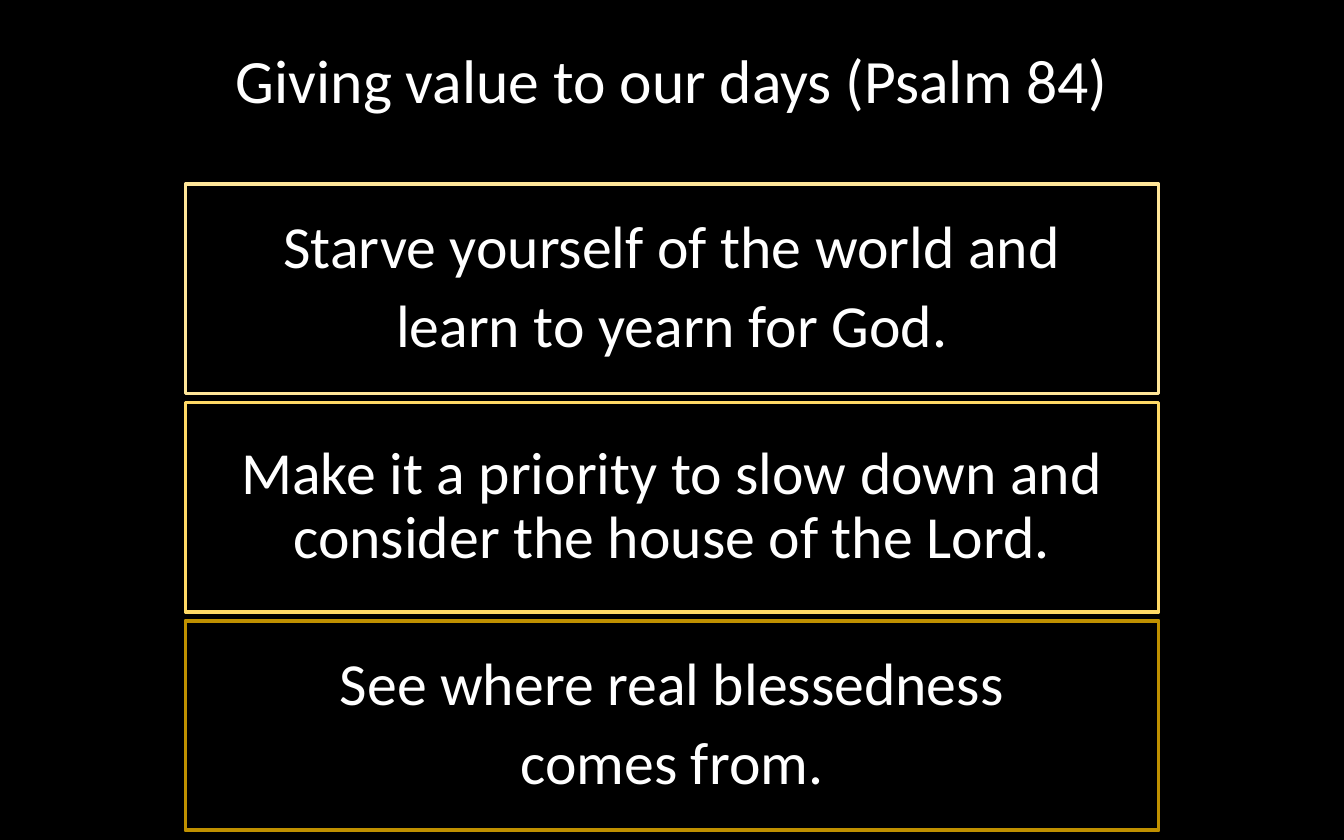
from dataclasses import dataclass

from pptx import Presentation
from pptx.dml.color import RGBColor
from pptx.enum.shapes import MSO_SHAPE
from pptx.enum.text import MSO_ANCHOR, PP_ALIGN
from pptx.util import Pt

RECTANGLE = MSO_SHAPE.RECTANGLE
MIDDLE = MSO_ANCHOR.MIDDLE
CENTER = PP_ALIGN.CENTER

BLACK = "000000"
WHITE = "FFFFFF"
BOX_LEFT, BOX_TOP = 99.4, 98.6
BOX_WIDTH, BOX_HEIGHT = 521.3, 112.3
BOX_PITCH = 117


@dataclass(frozen=True)
class Point:
    lines: tuple[str, ...]
    border: str


POINTS = (
    Point(("Starve yourself of the world and", "learn to yearn for God."), "FFE699"),
    Point(("Make it a priority to slow down and consider the house of the Lord.",), "FFD966"),
    Point(("See where real blessedness", "comes from."), "BF9000"),
)


def color(value: str) -> RGBColor:
    return RGBColor.from_string(value)


def apply_format(target, values: dict) -> None:
    for name, value in values.items():
        setattr(target, name, value)


def write_text(shape, lines: tuple[str, ...], size: float, space_before: float) -> None:
    frame = shape.text_frame
    apply_format(frame, {"word_wrap": True, "vertical_anchor": MIDDLE})
    for index, line in enumerate(lines):
        paragraph = frame.add_paragraph() if index else frame.paragraphs[0]
        apply_format(paragraph, {
            "alignment": CENTER,
            "line_spacing": 0.9,
            "space_before": Pt(space_before),
        })
        run = paragraph.add_run()
        run.text = line
        apply_format(run.font, {"name": "Calibri", "size": Pt(size)})
        run.font.color.rgb = color(WHITE)


def draw_title(slide, text: str) -> None:
    title = slide.shapes.add_textbox(Pt(49.7), Pt(1.4), Pt(620.6), Pt(87.1))
    write_text(title, (text,), 33, 0)


def draw_point(slide, point: Point, top: float) -> None:
    box = slide.shapes.add_shape(
        RECTANGLE, Pt(BOX_LEFT), Pt(top), Pt(BOX_WIDTH), Pt(BOX_HEIGHT)
    )
    box.shadow.inherit = False
    box.fill.background()
    box.line.color.rgb = color(point.border)
    box.line.width = Pt(2)
    write_text(box, point.lines, 32, 7.5)


def main() -> None:
    presentation = Presentation()
    apply_format(presentation, {"slide_width": Pt(720), "slide_height": Pt(450)})
    slide = presentation.slides.add_slide(presentation.slide_layouts[6])
    background = slide.background.fill
    background.solid()
    background.fore_color.rgb = color(BLACK)
    draw_title(slide, "Giving value to our days (Psalm 84)")
    for index, point in enumerate(POINTS):
        draw_point(slide, point, BOX_TOP + index * BOX_PITCH)
    presentation.save("out.pptx")


if __name__ == "__main__":
    main()
